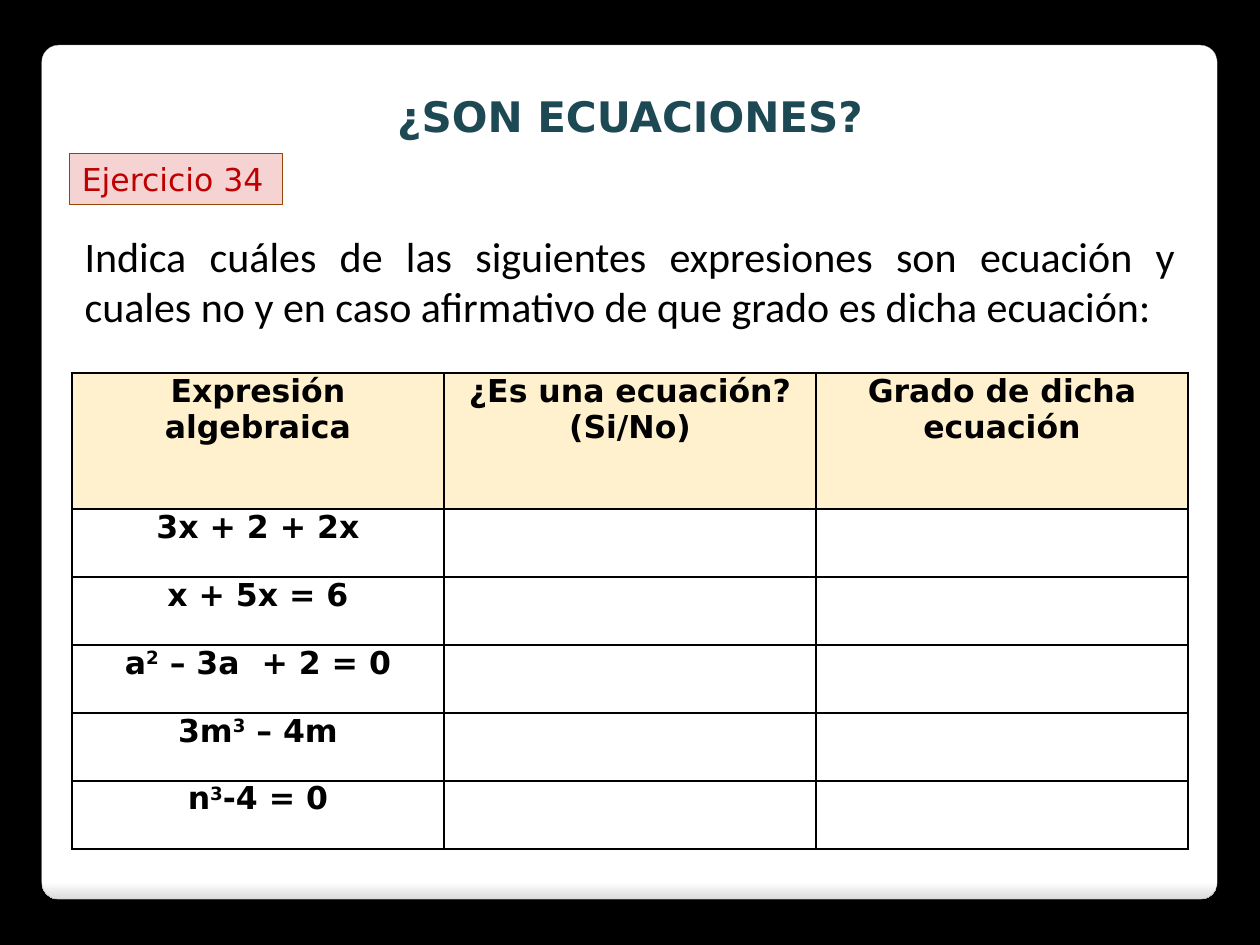
from dataclasses import dataclass

from lxml import etree
from pptx import Presentation
from pptx.dml.color import RGBColor
from pptx.enum.shapes import MSO_SHAPE
from pptx.enum.text import MSO_ANCHOR, MSO_AUTO_SIZE, PP_ALIGN
from pptx.oxml.ns import qn
from pptx.util import Cm, Pt

ROUNDED, RECTANGLE = MSO_SHAPE.ROUNDED_RECTANGLE, MSO_SHAPE.RECTANGLE
LEFT, CENTER, JUSTIFY = PP_ALIGN.LEFT, PP_ALIGN.CENTER, PP_ALIGN.JUSTIFY
TOP, MIDDLE = MSO_ANCHOR.TOP, MSO_ANCHOR.MIDDLE
NO_AUTOFIT = MSO_AUTO_SIZE.NONE


@dataclass(frozen=True)
class Theme:
    heading_font: str = "DejaVu Sans"
    body_font: str = "Calibri"
    large: int = 24
    normal: int = 18
    background: str = "000000"
    card: str = "FFFFFF"
    card_edge: str = "DADADA"
    card_line: str = "A4A4A4"
    title: str = "1C4954"
    badge: str = "F5D3D3"
    badge_line: str = "964305"
    badge_text: str = "C00000"
    text: str = "000000"
    header: str = "FFF1CE"


def rgb(value):
    return RGBColor.from_string(value)


class ExerciseSlide:
    def __init__(self, presentation, theme):
        self.theme = theme
        self.slide = presentation.slides.add_slide(presentation.slide_layouts[1])
        background = self.slide.background.fill
        background.solid()
        background.fore_color.rgb = rgb(theme.background)

    def format(self, paragraph, size, color, font, align=LEFT, bold=False):
        paragraph.alignment = align
        paragraph.font.size = Pt(size)
        paragraph.font.color.rgb = rgb(color)
        paragraph.font.name = font
        paragraph.font.bold = bold

    def box(self, kind, area, line, width):
        shape = self.slide.shapes.add_shape(kind, *map(Cm, area))
        shape.shadow.inherit = False
        shape.line.color.rgb = rgb(line)
        shape.line.width = Pt(width)
        return shape

    def card(self, *area):
        card = self.box(ROUNDED, area, self.theme.card_line, 0.16)
        card.adjustments[0] = 0.02
        card.fill.gradient()
        card.fill.gradient_angle = 270
        colors = (self.theme.card, self.theme.card_edge)
        for stop, position, color in zip(card.fill.gradient_stops, (0.98, 1), colors):
            stop.position = position
            stop.color.rgb = rgb(color)
        # Send the card behind the placeholders
        self.slide.shapes._spTree.insert(2, card._element)

    def badge(self, text, *area):
        badge = self.box(RECTANGLE, area, self.theme.badge_line, 0.75)
        badge.fill.solid()
        badge.fill.fore_color.rgb = rgb(self.theme.badge)
        badge.text_frame.text = text
        badge.text_frame.vertical_anchor = MIDDLE
        self.format(badge.text_frame.paragraphs[0], self.theme.normal,
                    self.theme.badge_text, self.theme.heading_font)

    def place(self, holder, text, area):
        holder.left, holder.top, holder.width, holder.height = map(Cm, area)
        frame = holder.text_frame
        frame.text = text
        frame.word_wrap = True
        frame.auto_size = NO_AUTOFIT
        frame.vertical_anchor = TOP
        paragraph = frame.paragraphs[0]
        paragraph.space_before = Pt(0)
        return paragraph

    def title(self, text, *area):
        paragraph = self.place(self.slide.shapes.title, text, area)
        self.format(paragraph, self.theme.large, self.theme.title,
                    self.theme.heading_font, CENTER, True)

    def body(self, text, *area):
        paragraph = self.place(self.slide.placeholders[1], text, area)
        self.format(paragraph, self.theme.large, self.theme.text,
                    self.theme.body_font, JUSTIFY)
        properties = paragraph._p.get_or_add_pPr()
        properties.set("marL", "0")
        properties.set("indent", "0")
        properties.insert_element_before(
            etree.Element(qn("a:buNone")), "a:tabLst", "a:defRPr", "a:extLst")

    def borders(self, cell):
        properties = cell._tc.get_or_add_tcPr()
        for index, side in enumerate(("lnL", "lnR", "lnT", "lnB")):
            line = etree.Element(qn(f"a:{side}"), w=str(Pt(1)))
            fill = etree.SubElement(line, qn("a:solidFill"))
            etree.SubElement(fill, qn("a:srgbClr"), val=self.theme.text)
            properties.insert(index, line)

    def cell(self, cell, text, is_header):
        """Fill one cell; text between ^ marks is superscript."""
        cell.margin_left = cell.margin_right = Cm(0.18)
        cell.margin_top = cell.margin_bottom = 0
        paragraph = cell.text_frame.paragraphs[0]
        for index, part in enumerate(text.split("^")):
            if part:
                run = paragraph.add_run()
                run.text = part
                if index % 2:
                    run._r.get_or_add_rPr().set("baseline", "30000")
        self.format(paragraph, self.theme.normal, self.theme.text,
                    self.theme.heading_font, CENTER, True)
        paragraph.space_before = paragraph.space_after = Pt(6)
        if is_header:
            cell.fill.solid()
            cell.fill.fore_color.rgb = rgb(self.theme.header)
        else:
            cell.fill.background()
        self.borders(cell)

    def table(self, headers, expressions, left, top, column, header_row, row):
        rows = [headers] + [(item, "", "") for item in expressions]
        heights = [header_row] + [row] * len(expressions)
        table = self.slide.shapes.add_table(
            len(rows), len(headers), Cm(left), Cm(top),
            Cm(column * len(headers)), Cm(sum(heights))).table
        table.first_row = table.horz_banding = False
        for table_column in table.columns:
            table_column.width = Cm(column)
        for r, (texts, height) in enumerate(zip(rows, heights)):
            table.rows[r].height = Cm(height)
            for c, text in enumerate(texts):
                self.cell(table.cell(r, c), text, r == 0)


def main():
    presentation = Presentation()
    presentation.slide_width, presentation.slide_height = Cm(25.4), Cm(19.05)
    exercise = ExerciseSlide(presentation, Theme())

    # Card and headings
    exercise.card(0.84, 0.91, 23.7, 17.22)
    exercise.title("¿SON ECUACIONES?", 0.99, 1.7, 23.42, 1.27)
    exercise.badge("Ejercicio 34", 1.4, 3.1, 4.29, 1.03)

    # Instructions
    exercise.body(
        "Indica cuáles de las siguientes expresiones son ecuación y cuales no "
        "y en caso afirmativo de que grado es dicha ecuación:",
        1.45, 4.52, 22.5, 2.31)

    # Answer table
    exercise.table(
        ("Expresión algebraica", "¿Es una ecuación? (Si/No)",
         "Grado de dicha ecuación"),
        ("3x + 2 + 2x", "x + 5x = 6", "a^2^ – 3a  + 2 = 0", "3m^3^ – 4m",
         "n^3^-4 = 0"),
        left=1.45, top=7.52, column=7.5, header_row=2.74, row=1.37)

    presentation.save("out.pptx")


if __name__ == "__main__":
    main()
